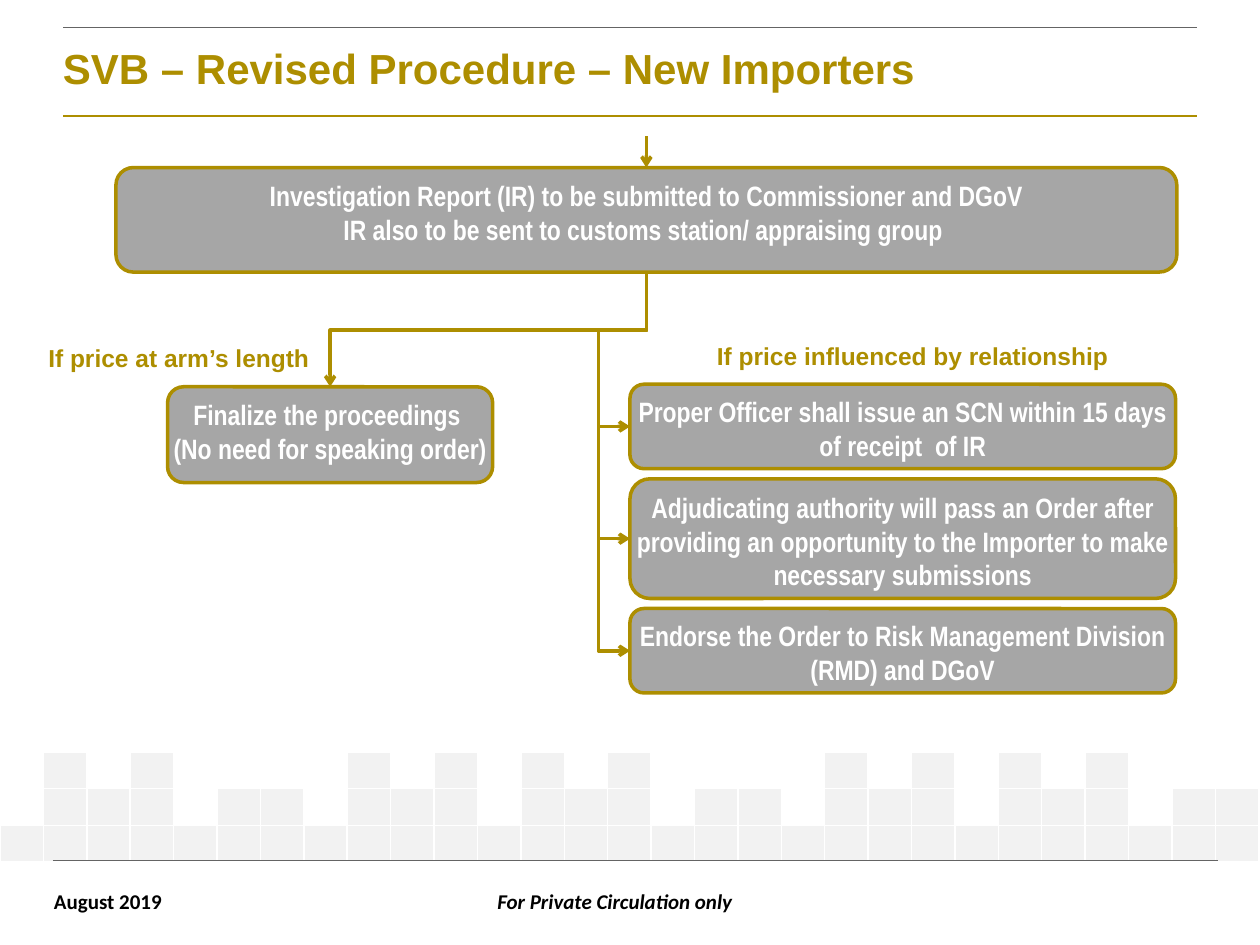
"""Build the slide on the revised SVB procedure for new importers."""
from lxml import etree
from pptx import Presentation
from pptx.dml.color import RGBColor
from pptx.enum import shapes, text
from pptx.oxml import ns
from pptx.util import Inches, Pt

COLORS = {"gold": "AD8E00", "box": "A6A6A6", "tile": "F2F2F2",
          "rule": "646464", "white": "FFFFFF", "black": "000000"}

TITLE = "SVB – Revised Procedure – New Importers"
REPORT = ((0.92, 1.33, 8.42, 0.83),
          ["Investigation Report (IR) to be submitted to Commissioner and DGoV",
           "IR also to be sent to customs station/ appraising group "])
FINALIZE = ((1.33, 3.07, 2.58, 0.76),
            ["Finalize the proceedings ", "(No need for speaking order)"])
INFLUENCED_STEPS = [
    (0.67, "Proper Officer shall issue an SCN within 15 days of receipt  of IR"),
    (0.95, "Adjudicating authority will pass an Order after providing an "
           "opportunity to the Importer to make necessary submissions"),
    (0.67, "Endorse the Order to Risk Management Division (RMD) and DGoV"),
]
STEP_LEFT, STEP_TOP, STEP_WIDTH, STEP_GAP = 5, 3.05, 4.33, 0.08
CONDITIONS = [((0.17, 2.67, 2.5, 0.34), "If price at arm’s length"),
              ((5.33, 2.66, 3.83, 0.34), "If price influenced by relationship")]
RULES = [(0.5, 9.5, 0.92, "gold", 1.5), (0.5, 9.5, 0.22, "rule", 0.5),
         (0.42, 9.67, 6.83, "rule", 0.25)]
SKYLINE = [".#.#....#.#.#.#....#.#.#.#...",
           ".###.##.###.###.##.###.###.##",
           "#" * 29]
SKYLINE_TOP, SKYLINE_ROW = 5.97, 0.29
TRUNK_X, TRUNK_TOP, BRANCH_Y, BUS_X = 5.13, 2.17, 2.62, 4.75


def rgb(name):
    return RGBColor.from_string(COLORS[name])


def write(frame, lines, size, font, color, align=text.PP_ALIGN.CENTER,
          italic=False, spacing=None):
    frame.text = "\n".join(lines)
    for paragraph in frame.paragraphs:
        paragraph.alignment = align
        paragraph.line_spacing = spacing
        style = paragraph.font
        style.size, style.name, style.bold = Pt(size), font, True
        style.italic = italic
        style.color.rgb = rgb(color)


def add_label(slide, area, label, size, font, color, wrap=True, **style):
    frame = slide.shapes.add_textbox(*map(Inches, area)).text_frame
    frame.word_wrap = wrap
    write(frame, [label], size, font, color, **style)
    return frame


def add_box(slide, area, lines):
    box = slide.shapes.add_shape(shapes.MSO_SHAPE.ROUNDED_RECTANGLE, *map(Inches, area))
    box.shadow.inherit = False
    box.fill.solid()
    box.fill.fore_color.rgb = rgb("box")
    box.line.color.rgb = rgb("gold")
    box.line.width = Pt(2)
    frame = box.text_frame
    frame.word_wrap = True
    frame.margin_left = frame.margin_right = 0
    frame.vertical_anchor = text.MSO_ANCHOR.TOP
    write(frame, lines, 16, "Arial Narrow", "white")
    return box


def add_line(slide, ends, color, width, arrow=False, kind=shapes.MSO_CONNECTOR.STRAIGHT):
    line = slide.shapes.add_connector(kind, *map(Inches, ends))
    line.line.color.rgb = rgb(color)
    line.line.width = Pt(width)
    if arrow:
        etree.SubElement(line.line._get_or_add_ln(), ns.qn("a:tailEnd"), type="arrow")
    etree.SubElement(line._element.spPr, ns.qn("a:effectLst"))
    return line


def add_branch(slide, end_x, end_y, bus_x=None):
    across, down = TRUNK_X - end_x, end_y - TRUNK_TOP
    left = (TRUNK_X + end_x - down) / 2
    top = (TRUNK_TOP + end_y - across) / 2
    branch = add_line(slide, (left, top, left + down, top + across), "gold", 2,
                      True, shapes.MSO_CONNECTOR.ELBOW)
    properties = branch._element.spPr
    properties.find(ns.qn("a:xfrm")).set("rot", "5400000")
    geometry = properties.find(ns.qn("a:prstGeom"))
    bends = [(BRANCH_Y - TRUNK_TOP) / down]
    if bus_x is not None:
        geometry.set("prst", "bentConnector4")
        bends.append((TRUNK_X - bus_x) / across)
    guides = geometry.find(ns.qn("a:avLst"))
    for number, bend in enumerate(bends, 1):
        etree.SubElement(guides, ns.qn("a:gd"), name=f"adj{number}",
                         fmla=f"val {round(bend * 100000)}")


def style_tile(cell, filled):
    cell.margin_left = cell.margin_right = cell.margin_top = cell.margin_bottom = 0
    etree.SubElement(cell.text_frame.paragraphs[0]._p, ns.qn("a:endParaRPr"), sz="800")
    properties = cell._tc.get_or_add_tcPr()
    for side in "LRTB":
        border = etree.SubElement(properties, ns.qn(f"a:ln{side}"), w=str(Pt(1)))
        paint = etree.SubElement(border, ns.qn("a:solidFill"))
        etree.SubElement(paint, ns.qn("a:srgbClr"), val=COLORS["white"])
    if filled:
        cell.fill.solid()
        cell.fill.fore_color.rgb = rgb("tile")
    else:
        cell.fill.background()


def add_skyline(slide):
    rows, columns = len(SKYLINE), len(SKYLINE[0])
    table = slide.shapes.add_table(rows, columns, 0, Inches(SKYLINE_TOP), Inches(10),
                                   Inches(SKYLINE_ROW * rows)).table
    table.first_row = table.horz_banding = False
    for row, pattern in enumerate(SKYLINE):
        for column, mark in enumerate(pattern):
            style_tile(table.cell(row, column), mark == "#")


def main():
    deck = Presentation()
    deck.slide_width, deck.slide_height = Inches(10), Inches(7.5)
    slide = deck.slides.add_slide(deck.slide_layouts[6])

    add_skyline(slide)
    for left, right, y, color, width in RULES:
        add_line(slide, (left, y, right, y), color, width)
    add_label(slide, (0.33, 7, 1.07, 0.3), "August 2019", 12, "Calibri", "black",
              wrap=False, align=text.PP_ALIGN.LEFT)
    add_label(slide, (2.42, 7, 4.92, 0.3), "For Private Circulation only", 12,
              "Calibri", "black", italic=True)
    title = add_label(slide, (0.5, 0.22, 9, 0.66), TITLE, 24, "Arial", "gold",
                      align=text.PP_ALIGN.LEFT, spacing=0.85)
    title.margin_left = title.margin_right = title.margin_bottom = 0
    title.margin_top = Inches(0.04)
    title.vertical_anchor = text.MSO_ANCHOR.MIDDLE

    report = add_box(slide, *REPORT)
    entry = add_line(slide, (TRUNK_X, 1.08, TRUNK_X, 1.33), "gold", 2, arrow=True)
    entry.end_connect(report, 0)

    finalize_area, finalize_lines = FINALIZE
    add_box(slide, finalize_area, finalize_lines)
    left, top, width, _ = finalize_area
    add_branch(slide, left + width / 2, top)

    top = STEP_TOP
    for height, step in INFLUENCED_STEPS:
        add_box(slide, (STEP_LEFT, top, STEP_WIDTH, height), [step])
        add_branch(slide, STEP_LEFT, top + height / 2, BUS_X)
        top += height + STEP_GAP

    for area, condition in CONDITIONS:
        add_label(slide, area, condition, 14, "Arial", "gold")
    deck.save("out.pptx")


if __name__ == "__main__":
    main()
